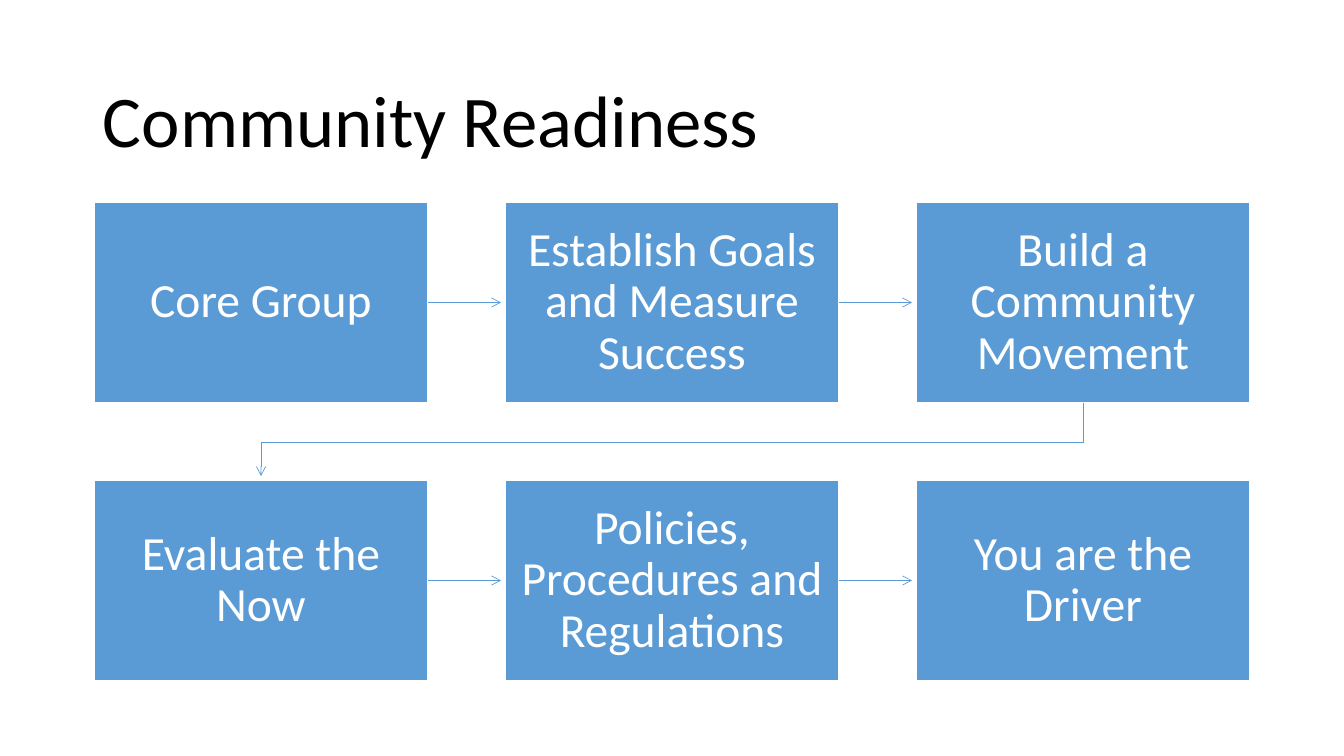
"""Build the Community Readiness slide: six steps in two rows, joined by arrows."""
from lxml.etree import SubElement
from pptx import Presentation
from pptx.dml.color import RGBColor
from pptx.enum.shapes import MSO_CONNECTOR as Connector, MSO_SHAPE as Shape
from pptx.enum.text import MSO_ANCHOR as Anchor, PP_ALIGN as Align
from pptx.oxml.ns import qn
from pptx.util import Pt

TITLE = "Community Readiness"
STEPS = [
    ["Core Group", "Establish Goals and Measure Success", "Build a Community Movement"],
    ["Evaluate the Now", "Policies, Procedures and Regulations", "You are the Driver"],
]
COLORS = {"title": "000000", "step": "5B9BD5", "step_text": "FFFFFF", "arrow": "5B9BD5"}
FONT = "Calibri"
SCALE = 914400 / 100.8
SLIDE_W, SLIDE_H = 1344, 756
TITLE_BOX = (93, 61, 1159, 125)
LEFT, TOP = 94, 202
STEP_W, STEP_H = 334, 201
PITCH_X, PITCH_Y = 411, 278
ARROW_GAP = 4


def px(length):
    return round(length * SCALE)


def color(name):
    return RGBColor.from_string(COLORS[name])


def write(shape, text, size, color_name, align):
    frame = shape.text_frame
    frame.word_wrap = True
    frame.vertical_anchor = Anchor.MIDDLE
    frame.text = text
    paragraph = frame.paragraphs[0]
    paragraph.alignment = align
    paragraph.line_spacing = 0.9
    font = paragraph.runs[0].font
    font.name, font.size = FONT, Pt(size)
    font.color.rgb = color(color_name)


def add_step(slide, text, x, y):
    step = slide.shapes.add_shape(Shape.RECTANGLE, px(x), px(y), px(STEP_W), px(STEP_H))
    step.shadow.inherit = False
    step.fill.solid()
    step.fill.fore_color.rgb = color("step")
    step.line.color.rgb = color("step_text")
    step.line.width = Pt(1)
    write(step, text, 34, "step_text", Align.CENTER)
    frame = step.text_frame
    frame.margin_left = frame.margin_right = px(16)
    frame.margin_top = frame.margin_bottom = px(17)
    return step


def style_arrow(arrow):
    arrow.line.color.rgb = color("arrow")
    arrow.line.width = Pt(0.5)
    properties = arrow.element.spPr
    SubElement(properties.find(qn("a:ln")), qn("a:tailEnd"), type="arrow")
    SubElement(properties, qn("a:effectLst"))


def add_row_arrow(slide, step, x, y):
    middle = px(y + STEP_H / 2)
    arrow = slide.shapes.add_connector(
        Connector.STRAIGHT, px(x + STEP_W), middle, px(x + PITCH_X - ARROW_GAP), middle)
    arrow.begin_connect(step, 3)
    style_arrow(arrow)


def add_return_arrow(slide):
    first = LEFT + STEP_W / 2
    last = first + 2 * PITCH_X
    start = TOP + STEP_H
    end = TOP + PITCH_Y
    turn = (start + end) / 2
    outline = slide.shapes.build_freeform(last, start, scale=SCALE)
    outline.add_line_segments(
        [(last, turn), (first, turn), (first, end - ARROW_GAP)], close=False)
    arrow = outline.convert_to_shape()
    arrow.fill.background()
    style_arrow(arrow)


def main():
    deck = Presentation()
    deck.slide_width, deck.slide_height = px(SLIDE_W), px(SLIDE_H)
    slide = deck.slides.add_slide(deck.slide_layouts[6])
    title = slide.shapes.add_textbox(*map(px, TITLE_BOX))
    write(title, TITLE, 52, "title", Align.LEFT)
    for row, texts in enumerate(STEPS):
        for column, text in enumerate(texts):
            x, y = LEFT + column * PITCH_X, TOP + row * PITCH_Y
            step = add_step(slide, text, x, y)
            if column < len(texts) - 1:
                add_row_arrow(slide, step, x, y)
    add_return_arrow(slide)
    deck.save("out.pptx")


if __name__ == "__main__":
    main()
